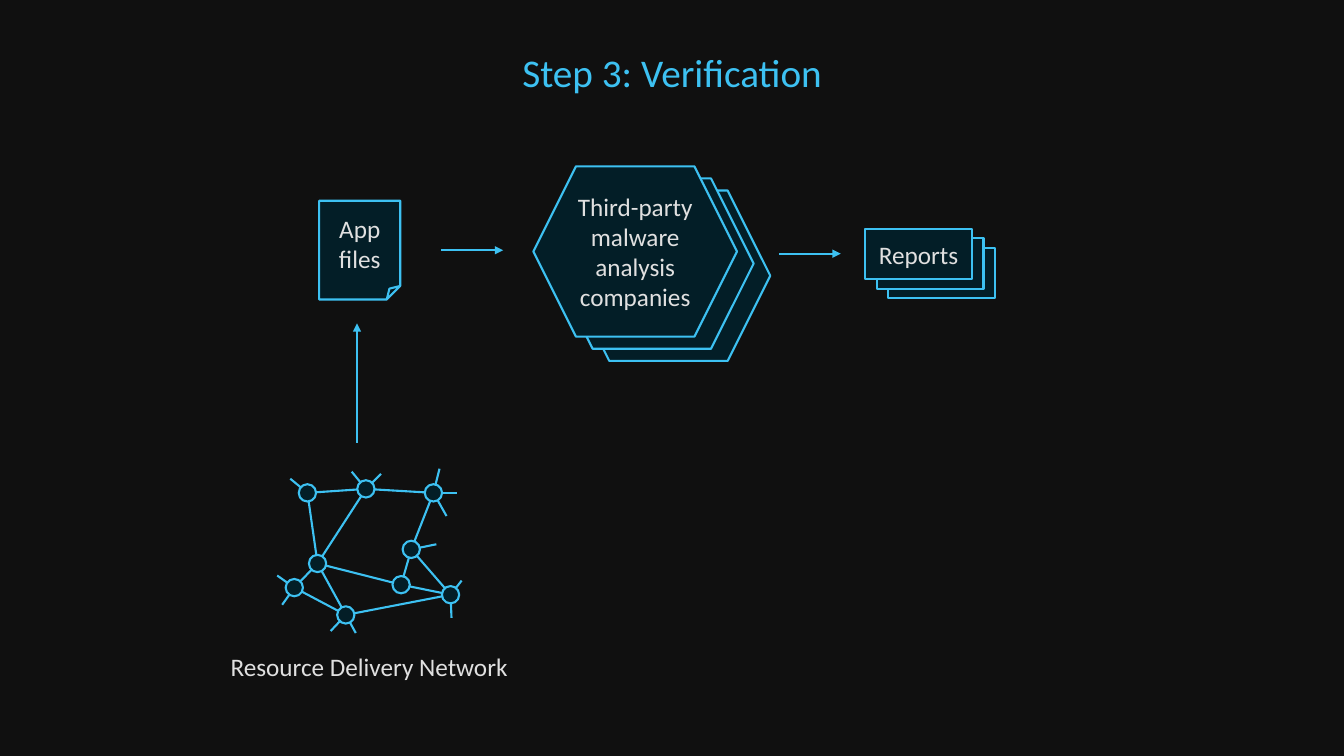
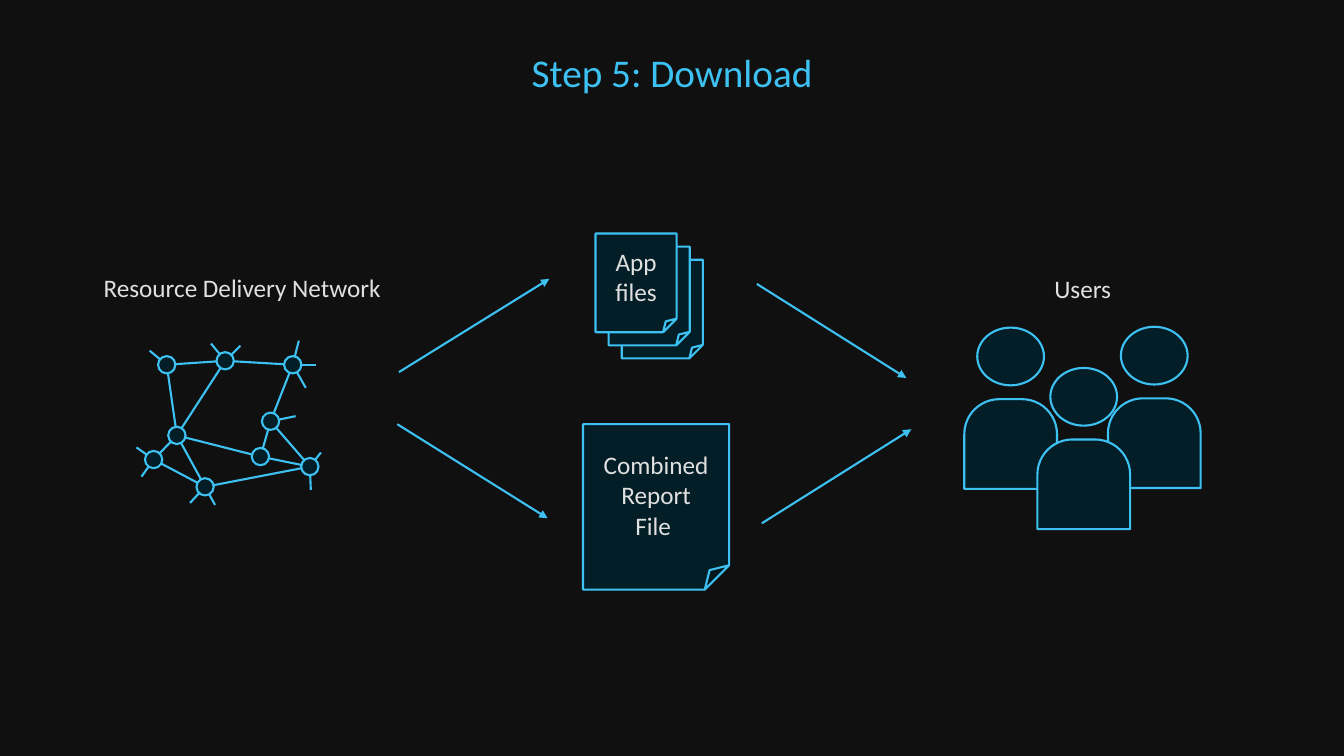
from dataclasses import dataclass

from lxml.etree import SubElement
from pptx import Presentation
from pptx.dml.color import RGBColor
from pptx.enum.shapes import MSO_CONNECTOR, MSO_SHAPE
from pptx.enum.text import MSO_ANCHOR, MSO_AUTO_SIZE, PP_ALIGN
from pptx.oxml.ns import qn
from pptx.util import Inches, Pt

COLUMNS, ROWS = 160, 90
CELL = Inches(7.5) / ROWS


@dataclass(frozen=True)
class Theme:
    """Colours, type and line weight shared by the slides."""
    background: RGBColor = RGBColor.from_string("101010")
    panel: RGBColor = RGBColor.from_string("031E27")
    accent: RGBColor = RGBColor.from_string("3DC1F2")
    text: RGBColor = RGBColor.from_string("E0E0E0")
    font: str = "Calibri"
    title_size: Pt = Pt(28)
    body_size: Pt = Pt(18)
    line: Pt = Pt(1.5)


THEME = Theme()


@dataclass(frozen=True)
class Box:
    """A rectangle measured in grid columns and rows."""
    left: float
    top: float
    width: float
    height: float

    def point(self, across, down):
        """Return the grid point at a percentage across and down the box."""
        return self.left + self.width * across / 100, self.top + self.height * down / 100

    def inner(self, across, down, width, height):
        """Return the inner box given in percentages of this one."""
        return Box(*self.point(across, down), self.width * width / 100, self.height * height / 100)

    def shifted(self, columns, rows):
        """Return the same box moved by columns and rows."""
        return Box(self.left + columns, self.top + rows, self.width, self.height)

    def emu(self):
        """Return the box as slide lengths."""
        return [round(n * CELL) for n in (self.left, self.top, self.width, self.height)]


TITLE = Box(27.85, 5.16, COLUMNS - 2 * 27.85, 6.84)

NODES = {
    "top mid": (48.1, 12.3), "top left": (16.4, 14.7), "top right": (84.7, 14.7),
    "right low": (94, 76.7), "right mid": (72.7, 49.1), "inner": (67.2, 70.6),
    "left mid": (21.9, 57.7), "bottom": (37.2, 89), "left low": (9.3, 72.4),
}
LINKS = {
    "top mid": ["top left", "top right", "left mid"],
    "right mid": ["top right", "inner", "right low"],
    "left mid": ["top left", "inner", "left low", "bottom"],
    "right low": ["inner", "bottom"],
    "left low": ["bottom"],
}
STUBS = {
    "top mid": [(40.4, 1.8), (56.3, 3.1)],
    "top left": [(7.1, 6.1)],
    "top right": [(88, 0), (97.3, 14.7), (91.8, 28.8)],
    "right mid": [(86.3, 46)],
    "right low": [(100, 68.1), (94.5, 90.8)],
    "bottom": [(29, 98.8), (42.6, 100)],
    "left low": [(0, 65), (2.7, 82.8)],
}
NODE_SIZE = 2.06


def write(frame, lines, size, color, align=PP_ALIGN.CENTER):
    """Fill a text frame with one paragraph per line."""
    frame.word_wrap = True
    for index, line in enumerate(lines):
        paragraph = frame.add_paragraph() if index else frame.paragraphs[0]
        paragraph.alignment = align
        run = paragraph.add_run()
        run.text = line
        run.font.name, run.font.size = THEME.font, size
        run.font.color.rgb = color


def add_label(slide, box, words, size=THEME.body_size, color=THEME.text, align=PP_ALIGN.CENTER):
    """Place a line of free text."""
    frame = slide.shapes.add_textbox(*box.emu()).text_frame
    write(frame, [words], size, color, align)
    frame.auto_size = MSO_AUTO_SIZE.SHAPE_TO_FIT_TEXT


def add_panel(shapes, outline, box, lines=()):
    """Place an outlined dark shape, with centred text if given."""
    panel = shapes.add_shape(outline, *box.emu())
    panel.shadow.inherit = False
    panel.fill.solid()
    panel.fill.fore_color.rgb = THEME.panel
    panel.line.color.rgb = THEME.accent
    panel.line.width = THEME.line
    if lines:
        panel.text_frame.vertical_anchor = MSO_ANCHOR.MIDDLE
        write(panel.text_frame, lines, THEME.body_size, THEME.text)
    return panel


def add_line(shapes, start, end, arrow=False):
    """Draw a straight line between two grid points."""
    ends = [round(n * CELL) for n in (*start, *end)]
    connector = shapes.add_connector(MSO_CONNECTOR.STRAIGHT, *ends)
    connector.line.color.rgb = THEME.accent
    connector.line.width = THEME.line
    properties = connector.element.find(qn("p:spPr"))
    if arrow:
        SubElement(properties.find(qn("a:ln")), qn("a:tailEnd"), type="triangle")
    SubElement(properties, qn("a:effectLst"))


def add_arrows(slide, routes):
    """Draw an arrow for each start and end."""
    for start, end in routes:
        add_line(slide.shapes, start, end, arrow=True)


def add_stack(shapes, outline, front, lines, step, count=3):
    """Pile equal shapes behind a front one that carries the text."""
    for depth in range(count - 1, -1, -1):
        box = front.shifted(depth * step[0], depth * step[1])
        add_panel(shapes, outline, box, () if depth else lines)


def add_network(slide, box):
    """Draw the mesh of linked nodes inside the box."""
    shapes = slide.shapes.add_group_shape().shapes
    centers = {name: box.point(*place) for name, place in NODES.items()}
    for name, neighbours in LINKS.items():
        for neighbour in neighbours:
            add_line(shapes, centers[name], centers[neighbour])
    for name, tips in STUBS.items():
        for tip in tips:
            add_line(shapes, centers[name], box.point(*tip))
    for x, y in centers.values():
        node = Box(x - NODE_SIZE / 2, y - NODE_SIZE / 2, NODE_SIZE, NODE_SIZE)
        add_panel(shapes, MSO_SHAPE.FLOWCHART_CONNECTOR, node)


def add_user(slide, box):
    """Draw a head and shoulders inside the box."""
    shapes = slide.shapes.add_group_shape().shapes
    body = add_panel(shapes, MSO_SHAPE.ROUND_2_SAME_RECTANGLE, box.inner(0, 44.4, 100, 55.6))
    body.adjustments[0] = 0.39
    add_panel(shapes, MSO_SHAPE.OVAL, box.inner(14, 0, 72, 35.8))


def add_titled_slide(deck, title):
    """Start a blank slide with the shared title."""
    slide = deck.slides.add_slide(deck.slide_layouts[6])
    add_label(slide, TITLE, title, THEME.title_size, THEME.accent)
    return slide


def build_verification(deck):
    """Build the slide on verification."""
    slide = add_titled_slide(deck, "Step 3: Verification")
    companies = slide.shapes.add_group_shape().shapes
    add_stack(companies, MSO_SHAPE.HEXAGON, Box(63.5, 19.8, 24.24, 20.28),
              ["Third-party", "malware analysis", "companies"], (1.98, 1.44))
    add_stack(slide.shapes, MSO_SHAPE.RECTANGLE, Box(103, 27.24, 12.72, 6),
              ["Reports"], (1.38, 1.14))
    add_network(slide, Box(33, 55.8, 21.96, 19.56))
    add_label(slide, Box(20, 77, 47.9, 4.8), "Resource Delivery Network")
    add_panel(slide.shapes, MSO_SHAPE.FOLDED_CORNER, Box(38, 23.9, 9.65, 11.75), ["App files"])
    add_arrows(slide, [
        ((42.5, 52.7), (42.5, 38.5)),
        ((52.5, 29.8), (59.9, 29.8)),
        ((92.8, 30.2), (100.1, 30.2)),
    ])


def build_download(deck):
    """Build the slide on downloading."""
    slide = add_titled_slide(deck, "Step 5: Download")
    add_label(slide, Box(11.16, 31.8, 35.64, 4.8), "Resource Delivery Network",
              align=PP_ALIGN.LEFT)
    add_network(slide, Box(16.25, 40.55, 21.96, 19.56))
    add_stack(slide.shapes, MSO_SHAPE.FOLDED_CORNER, Box(70.9, 27.8, 9.65, 11.75),
              ["App files"], (1.56, 1.56))
    add_panel(slide.shapes, MSO_SHAPE.FOLDED_CORNER, Box(69.4, 50.5, 17.4, 19.7),
              ["Combined Report", "File "])
    add_arrows(slide, [
        ((47.5, 44.3), (65.4, 33.2)),
        ((47.3, 50.5), (65.2, 61.7)),
        ((90.1, 33.8), (107.9, 45)),
        ((90.7, 62.3), (108.5, 51.1)),
    ])
    add_label(slide, Box(123.5, 31.9, 10.8, 4.8), "Users")
    for left, top in ((131.9, 38.9), (114.8, 39), (123.5, 43.8)):
        add_user(slide, Box(left, top, 11.04, 19.2))


def main():
    """Build and save the deck."""
    deck = Presentation()
    deck.slide_width, deck.slide_height = round(COLUMNS * CELL), round(ROWS * CELL)
    backdrop = deck.slide_master.background.fill
    backdrop.solid()
    backdrop.fore_color.rgb = THEME.background
    build_verification(deck)
    build_download(deck)
    deck.save("out.pptx")


if __name__ == "__main__":
    main()
